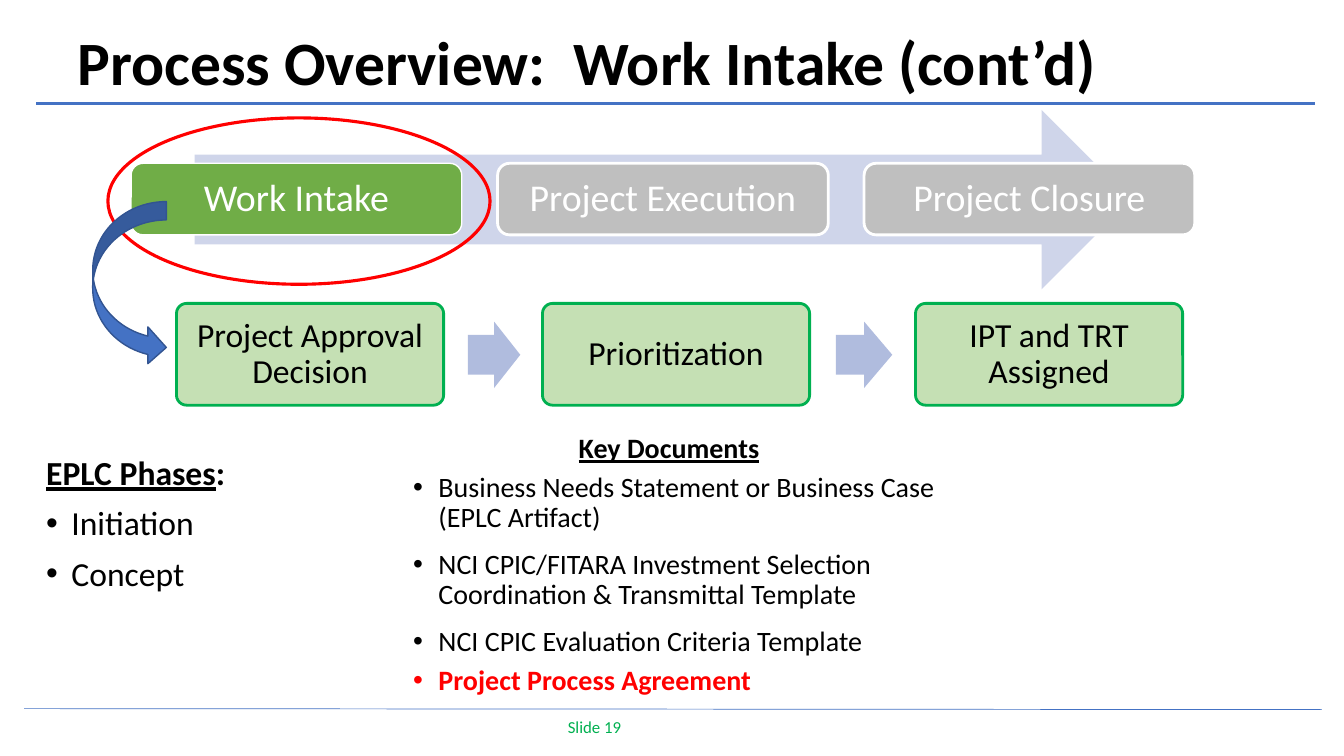
import pptx
import pptx.util
import pptx.dml.color
import pptx.enum.shapes
import pptx.enum.text
import pptx.oxml.ns
import lxml.etree

Inches = pptx.util.Inches
Pt = pptx.util.Pt
Shape = pptx.enum.shapes.MSO_SHAPE
Align = pptx.enum.text.PP_ALIGN
Anchor = pptx.enum.text.MSO_ANCHOR

COLORS = {
    "black": "000000", "white": "FFFFFF", "red": "FF0000", "blue": "4472C4",
    "dark blue": "325491", "pale blue": "CFD5EA", "soft blue": "B0BCDE",
    "green": "70AD47", "pale green": "C5E0B4", "bright green": "00B050", "gray": "BFBFBF",
}

TITLE = "Process Overview:  Work Intake (cont’d)"
FOOTER = "Slide 19"
RULES = [  # start, end, width in points
    ((0.24, 7.03), (13.11, 7.04), 0.5),
    ((0.36, 1.03), (13.04, 1.03), 2),
]
STAGES = [  # name, fill, outline width
    ("Work Intake", "green", 1),
    ("Project Execution", "gray", 2),
    ("Project Closure", "gray", 2),
]
STEPS = [("Project Approval Decision", 1.75), ("Prioritization", 5.38), ("IPT and TRT Assigned", 9.08)]
STEP_ARROWS = [(4.64, 0.52), (8.29, 0.56)]  # left, width
# Each paragraph: list of (words, run format), paragraph format, bullet margin
BOLD = {"bold": True}
HEADING = {"bold": True, "underline": True}
SPACED = {"space_before": Pt(6), "space_after": Pt(6)}
CLOSE = {"space_before": Pt(6)}
PHASE = {"space_before": Pt(10)}
DOCUMENTS = [
    ([("Key Documents", HEADING)], {"alignment": Align.CENTER, "space_before": Pt(12)}, None),
    ([("Business Needs Statement or Business Case (EPLC Artifact)", {})], SPACED, 0.51),
    ([("NCI CPIC/FITARA Investment Selection Coordination & Transmittal Template", {})], SPACED, 0.51),
    ([("NCI CPIC Evaluation Criteria Template", {})], CLOSE, 0.51),
    ([("Project Process Agreement", {"bold": True, "color": "red"})], CLOSE, 0.51),
]
PHASES = [
    ([("EPLC Phases", HEADING), (":", BOLD)], PHASE, None),
    ([("Initiation", {})], PHASE, 0.25),
    ([("Concept", {})], PHASE, 0.25),
]

STAGE_LEFT, STAGE_PITCH = 1.3, 3.635


def rgb(name):
    return pptx.dml.color.RGBColor.from_string(COLORS[name])


def set_all(target, values):
    for name, value in values.items():
        setattr(target, name, value)


def add_bullet(para, margin):
    props = para._p.get_or_add_pPr()
    props.set("marL", str(Inches(margin)))
    props.set("indent", str(Inches(-0.25)))
    for tag, name, value in (("a:buFont", "typeface", "Arial"), ("a:buChar", "char", "•")):
        lxml.etree.SubElement(props, pptx.oxml.ns.qn(tag)).set(name, value)


def write(box, paragraphs, size, color="black", anchor=Anchor.TOP, inset=None):
    frame = box.text_frame
    set_all(frame, {"word_wrap": True, "vertical_anchor": anchor})
    if inset is not None:
        sides = ("left", "top", "right", "bottom")
        set_all(frame, {"margin_" + side: Inches(inset) for side in sides})
    for index, (spans, layout, margin) in enumerate(paragraphs):
        para = frame.add_paragraph() if index else frame.paragraphs[0]
        set_all(para, {"line_spacing": 0.9, **layout})
        if margin is not None:
            add_bullet(para, margin)
        for words, style in spans:
            span = para.add_run()
            span.text = words
            look = dict(style)
            span.font.color.rgb = rgb(look.pop("color", color))
            set_all(span.font, {"name": "Calibri", "size": Pt(size), **look})


def add_text(page, area, paragraphs, size, **options):
    write(page.shapes.add_textbox(*map(Inches, area)), paragraphs, size, **options)


def add_figure(page, kind, area, fill=None, line=None, width=1, adjust=()):
    figure = page.shapes.add_shape(kind, *map(Inches, area))
    figure.shadow.inherit = False
    for index, value in enumerate(adjust):
        figure.adjustments[index] = value
    if fill:
        figure.fill.solid()
        figure.fill.fore_color.rgb = rgb(fill)
    else:
        figure.fill.background()
    if line:
        figure.line.color.rgb = rgb(line)
        figure.line.width = Pt(width)
    else:
        figure.line.fill.background()
    return figure


def add_rule(page, start, end, width):
    rule = page.shapes.add_connector(
        pptx.enum.shapes.MSO_CONNECTOR.STRAIGHT, *map(Inches, start + end))
    rule.line.color.rgb = rgb("blue")
    rule.line.width = Pt(width)
    lxml.etree.SubElement(rule._element.spPr, pptx.oxml.ns.qn("a:effectLst"))


def main():
    deck = pptx.Presentation()
    set_all(deck, {"slide_width": Inches(13.33), "slide_height": Inches(7.5)})
    page = deck.slides.add_slide(deck.slide_layouts[6])
    centered = {"alignment": Align.CENTER}

    for start, end, width in RULES:
        add_rule(page, start, end, width)
    add_text(page, (5.16, 7.01, 1.1, 0.43), [([(FOOTER, {})], {"alignment": Align.RIGHT}, None)],
             12, color="bright green", anchor=Anchor.MIDDLE)
    add_text(page, (0.67, 0.27, 10.63, 0.75), [([(TITLE, BOLD)], {}, None)],
             44, anchor=Anchor.MIDDLE)

    add_figure(page, Shape.RIGHT_ARROW, (1.93, 1.09, 9.29, 1.78), "pale blue")
    for index, (name, fill, width) in enumerate(STAGES):
        area = (STAGE_LEFT + index * STAGE_PITCH, 1.62, 3.28, 0.71)
        stage = add_figure(page, Shape.ROUNDED_RECTANGLE, area, fill, "white", width)
        write(stage, [([(name, {})], centered, None)], 27, "white", Anchor.MIDDLE, 0.11)

    add_text(page, (3.74, 4.26, 5.79, 2.7), DOCUMENTS, 20)
    add_figure(page, Shape.OVAL, (1.07, 1.17, 3.79, 1.65), None, "red", 2.25)

    for name, left in STEPS:
        step = add_figure(page, Shape.ROUNDED_RECTANGLE, (left, 3.01, 2.65, 1.01),
                          "pale green", "bright green", 2, (0.1,))
        write(step, [([(name, {})], centered, None)], 24, "black", Anchor.MIDDLE, 0.1)
    for left, width in STEP_ARROWS:
        add_figure(page, Shape.RIGHT_ARROW, (left, 3.19, width, 0.66), "soft blue", adjust=(0.6, 0.5))

    add_figure(page, Shape.CURVED_RIGHT_ARROW, (0.92, 2, 0.73, 1.63), "blue", "dark blue")
    add_text(page, (0.36, 4.48, 2.23, 1.59), PHASES, 24)
    deck.save("out.pptx")


if __name__ == "__main__":
    main()
